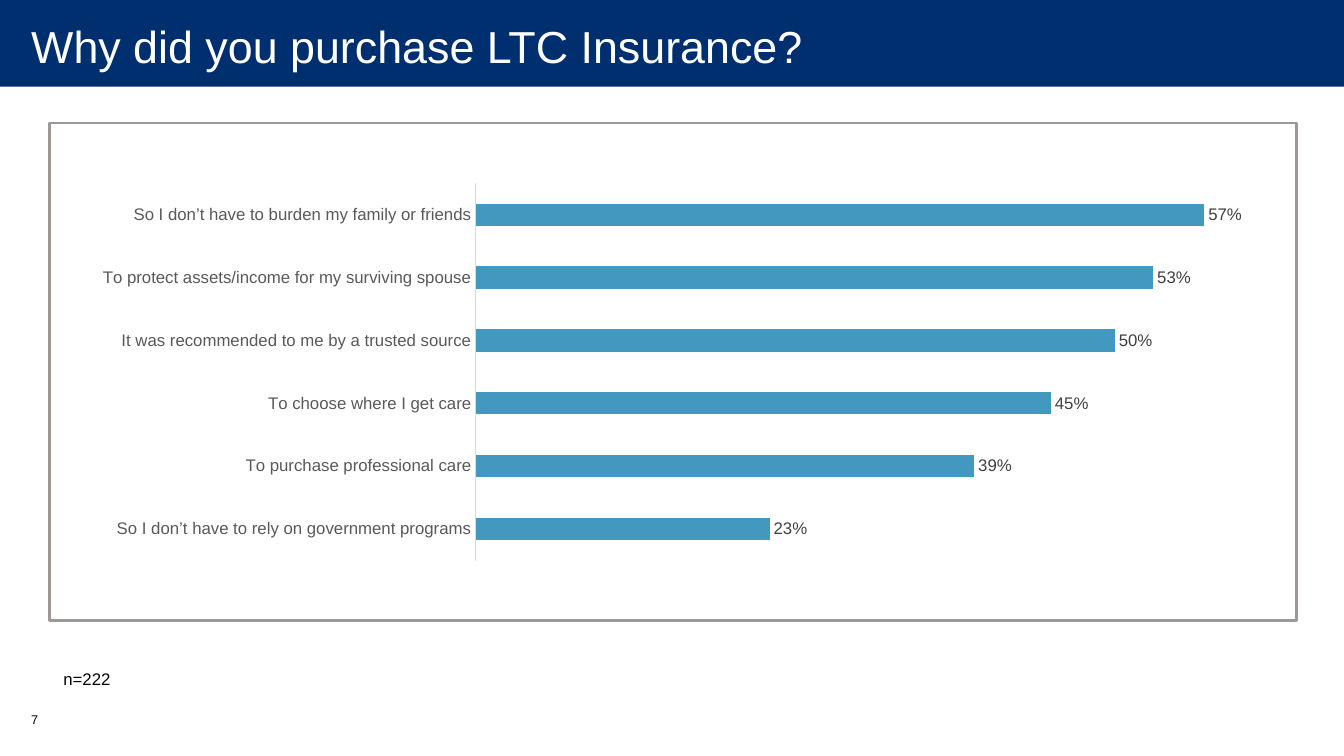
"""Build the slide on reasons for purchasing LTC insurance."""
from lxml import etree
from pptx import Presentation
from pptx.chart.data import CategoryChartData
from pptx.dml.color import RGBColor
from pptx.enum.chart import XL_CHART_TYPE, XL_LABEL_POSITION, XL_TICK_MARK
from pptx.enum.shapes import MSO_SHAPE
from pptx.enum.text import MSO_ANCHOR
from pptx.oxml.ns import qn
from pptx.util import Inches, Pt

RECTANGLE = MSO_SHAPE.RECTANGLE
BAR_CLUSTERED = XL_CHART_TYPE.BAR_CLUSTERED
OUTSIDE_END = XL_LABEL_POSITION.OUTSIDE_END
NO_TICKS = XL_TICK_MARK.NONE
TOP, MIDDLE, BOTTOM = MSO_ANCHOR.TOP, MSO_ANCHOR.MIDDLE, MSO_ANCHOR.BOTTOM

REASONS = [
    ("So I don’t have to rely on government programs", 0.23),
    ("To purchase professional care", 0.39),
    ("To choose where I get care", 0.45),
    ("It was recommended to me by a trusted source", 0.5),
    ("To protect assets/income for my surviving spouse", 0.53),
    ("So I don’t have to burden my family or friends", 0.57),
]


def color(hex_string):
    return RGBColor.from_string(hex_string)


class SlideBuilder:
    font_name = "Arial"
    navy, blue, white, black = "002F70", "4298BE", "FFFFFF", "000000"
    frame_gray, axis_gray = "9D9795", "D9D9D9"
    category_gray, label_gray = "595959", "404040"
    percent_format = "###0%"

    def __init__(self, slide):
        self.slide = slide

    def style_font(self, font, size, hex_color):
        font.name = self.font_name
        font.size = Pt(size)
        font.color.rgb = color(hex_color)

    def add_rectangle(self, left, top, width, height, fill, line=None):
        shape = self.slide.shapes.add_shape(
            RECTANGLE, Inches(left), Inches(top), Inches(width), Inches(height))
        shape.shadow.inherit = False
        shape.fill.solid()
        shape.fill.fore_color.rgb = color(fill)
        if line:
            shape.line.color.rgb = color(line)
            shape.line.width = Pt(2)
        else:
            shape.line.fill.background()

    def add_text(self, left, top, width, height, text, size, hex_color,
                 anchor=TOP, insets=(0.1, 0.05, 0.1, 0.05)):
        shape = self.slide.shapes.add_textbox(
            Inches(left), Inches(top), Inches(width), Inches(height))
        frame = shape.text_frame
        frame.word_wrap = True
        frame.vertical_anchor = anchor
        (frame.margin_left, frame.margin_top,
         frame.margin_right, frame.margin_bottom) = map(Inches, insets)
        frame.text = text
        self.style_font(frame.paragraphs[0].runs[0].font, size, hex_color)

    def add_bar_chart(self, left, top, width, height, rows):
        data = CategoryChartData(number_format=self.percent_format)
        data.categories = [reason for reason, share in rows]
        data.add_series("Series 1", [share for reason, share in rows])
        chart = self.slide.shapes.add_chart(
            BAR_CLUSTERED, Inches(left), Inches(top),
            Inches(width), Inches(height), data).chart
        chart.has_legend = False
        chart.has_title = False
        self.style_font(chart.font, 10, self.black)

        category_axis = chart.category_axis
        category_axis.major_tick_mark = NO_TICKS
        category_axis.format.line.color.rgb = color(self.axis_gray)
        category_axis.format.line.width = Pt(0.75)
        self.style_font(category_axis.tick_labels.font, 12, self.category_gray)

        value_axis = chart.value_axis
        value_axis.minimum_scale = 0
        value_axis.maximum_scale = 0.6
        value_axis.has_major_gridlines = False
        value_axis.visible = False

        plot = chart.plots[0]
        plot.gap_width = 182
        plot.vary_by_categories = False
        series = plot.series[0]
        series.format.fill.solid()
        series.format.fill.fore_color.rgb = color(self.blue)
        labels = series.data_labels
        labels.show_value = True
        labels.position = OUTSIDE_END
        labels.number_format = self.percent_format
        labels.number_format_is_linked = False
        self.style_font(labels.font, 12, self.label_gray)
        self.place_plot(chart, x=0.334, y=0.02, w=0.647, h=0.96)

    def place_plot(self, chart, **fractions):
        plot_area = chart.element.find(".//" + qn("c:plotArea"))
        layout = plot_area.find(qn("c:layout"))
        if layout is None:
            layout = etree.Element(qn("c:layout"))
            plot_area.insert(0, layout)
        manual = etree.SubElement(layout, qn("c:manualLayout"))
        settings = {"layoutTarget": "inner", "xMode": "edge", "yMode": "edge"}
        for tag, value in (settings | fractions).items():
            etree.SubElement(manual, qn("c:" + tag)).set("val", str(value))


def main():
    presentation = Presentation()
    presentation.slide_width = Inches(13.33)
    presentation.slide_height = Inches(7.5)
    slide = presentation.slides.add_slide(presentation.slide_layouts[6])
    builder = SlideBuilder(slide)
    builder.add_rectangle(0, 0, 13.33, 0.86, builder.navy)
    builder.add_rectangle(0.49, 1.22, 12.37, 4.94, builder.white, builder.frame_gray)
    builder.add_text(0.01, -0.03, 13.32, 0.97, "Why did you purchase LTC Insurance?",
                     32, builder.white, MIDDLE, (0.3, 0, 0.2, 0))
    builder.add_bar_chart(0.79, 1.74, 11.76, 3.9, REASONS)
    builder.add_text(0.53, 6.16, 5.85, 0.72, "n=222", 12, builder.black, BOTTOM)
    builder.add_text(0.21, 7.01, 0.49, 0.4, "7", 9, builder.black)
    presentation.save("out.pptx")


if __name__ == "__main__":
    main()
